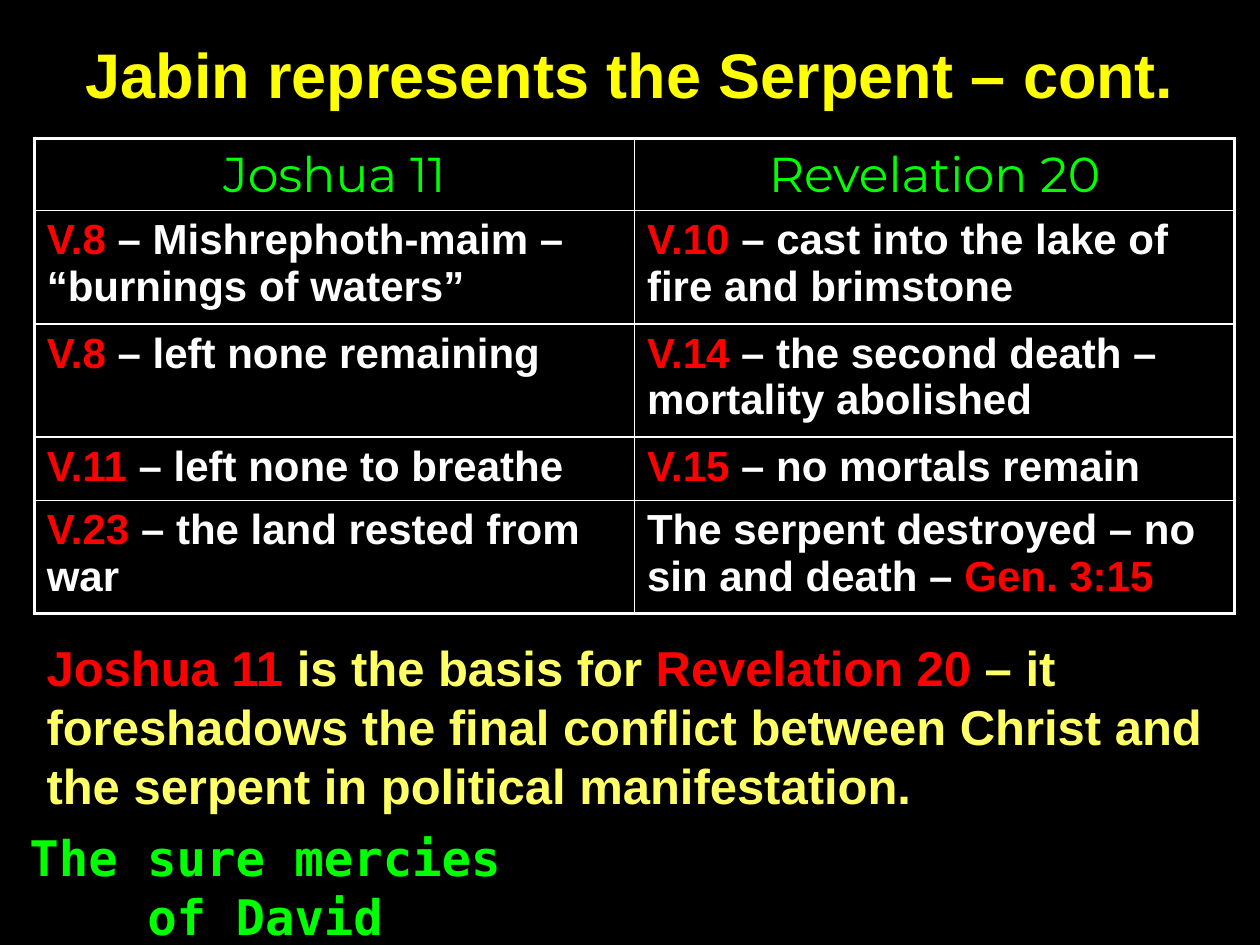
import lxml.etree
import pptx
import pptx.dml.color
import pptx.enum.text
import pptx.oxml.ns
import pptx.util
from pptx.util import Cm

COLORS = {
    "background": "000000",
    "title": "FFFF00",
    "green": "00FF00",
    "verse": "FF0000",
    "body": "FFFFFF",
    "summary": "FFFF66",
}
ALIGN = pptx.enum.text.PP_ALIGN
ANCHOR = pptx.enum.text.MSO_ANCHOR

TITLE = [("Jabin represents the Serpent – cont.", "title")]
HEADINGS = ["Joshua 11", "Revelation 20"]
COMPARISONS = [
    ([("V.8 ", "verse"), ("– Mishrephoth-maim – “burnings of waters”", "body")],
     [("V.10 ", "verse"), ("– cast into the lake of fire and brimstone", "body")]),
    ([("V.8", "verse"), (" – left none remaining", "body")],
     [("V.14", "verse"), (" – the second death – mortality abolished", "body")]),
    ([("V.11", "verse"), (" – left none to breathe", "body")],
     [("V.15", "verse"), (" – no mortals remain", "body")]),
    ([("V.23 ", "verse"), ("– the land rested from war", "body")],
     [("The serpent destroyed – no sin and death – ", "body"), ("Gen. 3:15", "verse")]),
]
SUMMARY = [
    ("Joshua 11 ", "verse"),
    ("is the basis for ", "summary"),
    ("Revelation 20 ", "verse"),
    ("– it foreshadows the final conflict between Christ and "
     "the serpent in political manifestation.", "summary"),
]
FOOTER = [("The sure mercies of David", "green")]

LEFT, WIDTH = 0.69, 24.2
TABLE_TOP = 2.79
ROW_HEIGHTS = [1.45, 2.14, 2.14, 1.2, 2.14]
OUTER_BORDER, INNER_BORDER = 2.25, 1


def color(name):
    return pptx.dml.color.RGBColor.from_string(COLORS[name])


def write_text(text_frame, runs, size=24, font="Arial", bold=True, align=ALIGN.LEFT):
    paragraph = text_frame.paragraphs[0]
    paragraph.alignment = align
    for text, color_name in runs:
        run = paragraph.add_run()
        run.text = text
        run.font.size = pptx.util.Pt(size)
        run.font.name = font
        run.font.bold = bold
        run.font.color.rgb = color(color_name)


def add_text(slide, runs, left, top, width, height, anchor=ANCHOR.TOP, **text_format):
    shape = slide.shapes.add_textbox(Cm(left), Cm(top), Cm(width), Cm(height))
    shape.text_frame.word_wrap = True
    shape.text_frame.vertical_anchor = anchor
    write_text(shape.text_frame, runs, **text_format)


def set_borders(cell, outer_sides):
    properties = cell._tc.get_or_add_tcPr()
    qualified = pptx.oxml.ns.qn
    for side in "LRTB":
        width = OUTER_BORDER if side in outer_sides else INNER_BORDER
        line = lxml.etree.SubElement(
            properties, qualified("a:ln" + side), w=str(pptx.util.Pt(width)))
        fill = lxml.etree.SubElement(line, qualified("a:solidFill"))
        lxml.etree.SubElement(fill, qualified("a:srgbClr"), val=COLORS["body"])


def add_comparison_table(slide):
    rows = [[[(heading, "green")] for heading in HEADINGS], *COMPARISONS]
    table = slide.shapes.add_table(
        len(rows), len(HEADINGS), Cm(LEFT), Cm(TABLE_TOP),
        Cm(WIDTH), Cm(sum(ROW_HEIGHTS))).table
    table.horz_banding = False
    table.first_row = False
    for row, height in zip(table.rows, ROW_HEIGHTS):
        row.height = Cm(height)
    for row_index, contents in enumerate(rows):
        header = row_index == 0
        text_format = (
            {"size": 28, "font": "Montserrat", "bold": False, "align": ALIGN.CENTER}
            if header else {})
        vertical = "T" if header else "B" if row_index == len(rows) - 1 else ""
        for column_index, runs in enumerate(contents):
            cell = table.cell(row_index, column_index)
            write_text(cell.text_frame, runs, **text_format)
            set_borders(cell, vertical + "LR"[column_index])
            cell.fill.background()


def main():
    presentation = pptx.Presentation()
    presentation.slide_width = Cm(25.4)
    presentation.slide_height = Cm(19.05)
    slide = presentation.slides.add_slide(presentation.slide_layouts[6])
    slide.background.fill.solid()
    slide.background.fill.fore_color.rgb = color("background")

    add_text(slide, TITLE, 0, 0.41, 25.4, 2.13, anchor=ANCHOR.MIDDLE,
             size=36, align=ALIGN.CENTER)
    add_comparison_table(slide)
    add_text(slide, SUMMARY, LEFT, 12.73, WIDTH, 3.81, size=28)
    add_text(slide, FOOTER, 0, 17.88, 10.69, 1.3, anchor=ANCHOR.BOTTOM,
             size=28, font="DejaVu Sans Mono", align=ALIGN.CENTER)
    presentation.save("out.pptx")


if __name__ == "__main__":
    main()
